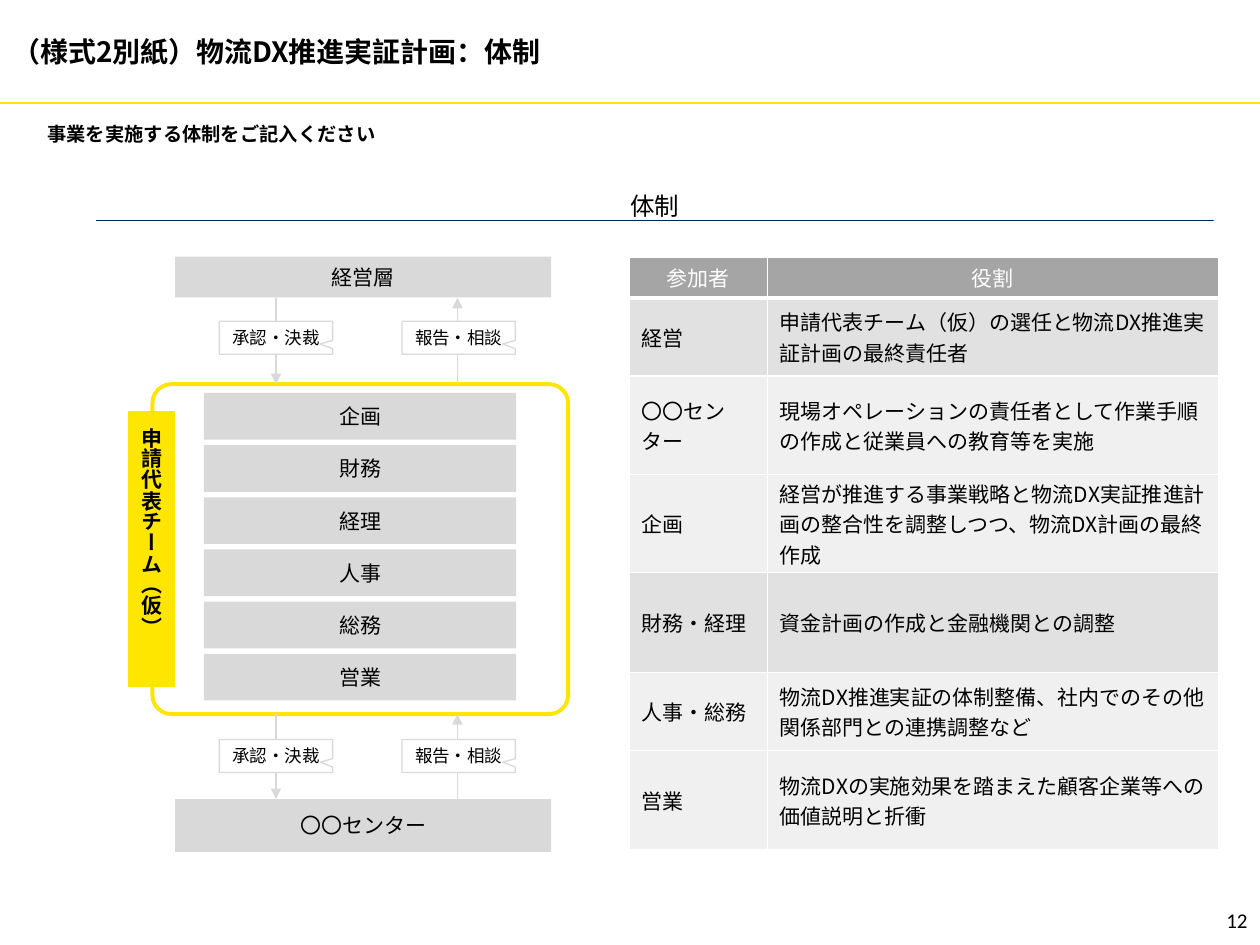
from dataclasses import dataclass

from lxml import etree
from pptx import Presentation
from pptx.dml.color import RGBColor
from pptx.enum.shapes import MSO_CONNECTOR, MSO_SHAPE
from pptx.enum.text import MSO_ANCHOR, PP_ALIGN
from pptx.oxml.ns import qn
from pptx.util import Pt

LEFT, CENTER, RIGHT = PP_ALIGN.LEFT, PP_ALIGN.CENTER, PP_ALIGN.RIGHT
TOP, MIDDLE, BOTTOM = MSO_ANCHOR.TOP, MSO_ANCHOR.MIDDLE, MSO_ANCHOR.BOTTOM
RECT, ROUND = MSO_SHAPE.RECTANGLE, MSO_SHAPE.ROUNDED_RECTANGLE
CALLOUT = MSO_SHAPE.RECTANGULAR_CALLOUT
STRAIGHT = MSO_CONNECTOR.STRAIGHT


@dataclass(frozen=True)
class Theme:
    """Hold the colours, fonts and type sizes."""
    face: str = "Noto Sans CJK JP"
    digit: str = "Calibri"
    ink: str = "000000"
    white: str = "FFFFFF"
    gold: str = "FFE600"
    navy: str = "002060"
    pale: str = "D6D6E8"
    gray: str = "D9D9D9"
    head: str = "A5A5A5"
    dark: str = "E1E1E1"
    light: str = "F0F0F0"
    title: int = 16
    topic: int = 14
    body: int = 12
    lead: int = 11
    note: int = 10


THEME = Theme()
TEAM = ["企画", "財務", "経理", "人事", "総務", "営業"]
ROLES = [
    ("参加者", "役割", 23.4, THEME.head),
    ("経営", "申請代表チーム（仮）の選任と物流DX推進実証計画の最終責任者", 44.6, THEME.dark),
    ("〇〇センター", "現場オペレーションの責任者として作業手順の作成と従業員への教育等を実施", 56.2, THEME.light),
    ("企画", "経営が推進する事業戦略と物流DX実証推進計画の整合性を調整しつつ、物流DX計画の最終作成",
     56.2, THEME.light),
    ("財務・経理", "資金計画の作成と金融機関との調整", 57, THEME.dark),
    ("人事・総務", "物流DX推進実証の体制整備、社内でのその他関係部門との連携調整など", 44.6, THEME.light),
    ("営業", "物流DXの実施効果を踏まえた顧客企業等への価値説明と折衝", 57, THEME.light),
]


def apply(item, values):
    """Set each named value on the item."""
    for name, value in values.items():
        setattr(item, name, value)


def paint(fill, color):
    """Fill with a colour, or clear the fill if there is none."""
    if color:
        fill.solid()
        fill.fore_color.rgb = RGBColor.from_string(color)
    else:
        fill.background()


def stroke(line, color, width=0.75):
    """Draw a line format in a colour and width."""
    paint(line.fill, color)
    if color:
        line.width = Pt(width)


def write(frame, text, size=THEME.body, align=CENTER, bold=False,
          color=THEME.ink, face=THEME.face):
    """Write one styled paragraph and return it."""
    para = frame.paragraphs[0]
    para.alignment = align
    run = para.add_run()
    run.text = text
    apply(run.font, {"size": Pt(size), "bold": bold, "name": face})
    run.font.color.rgb = RGBColor.from_string(color)
    etree.SubElement(run.font._element, qn("a:ea"), typeface=face)
    return para


def place(frame, anchor, side, edge):
    """Wrap the text and set its anchor and margins."""
    apply(frame, {
        "word_wrap": True, "vertical_anchor": anchor,
        "margin_left": Pt(side), "margin_right": Pt(side),
        "margin_top": Pt(edge), "margin_bottom": Pt(edge),
    })


def label(slide, area, text, anchor=MIDDLE, **style):
    """Add a plain text box."""
    frame = slide.shapes.add_textbox(*map(Pt, area)).text_frame
    place(frame, anchor, 7.2, 3.6)
    write(frame, text, **style)


def block(slide, area, kind=RECT, fill=THEME.gray, line=None, width=0.75):
    """Add a flat shape with a ready text frame."""
    shape = slide.shapes.add_shape(kind, *map(Pt, area))
    shape.shadow.inherit = False
    paint(shape.fill, fill)
    stroke(shape.line, line, width)
    place(shape.text_frame, MIDDLE, 2.9, 2.9)
    return shape


def rule(slide, start, end, color=THEME.gray, width=0.75, arrow=False):
    """Add a straight line, with an arrowhead if asked."""
    line = slide.shapes.add_connector(STRAIGHT, *map(Pt, start + end))
    stroke(line.line, color, width)
    etree.SubElement(line._element.spPr, qn("a:effectLst"))
    if arrow:
        etree.SubElement(line.line._get_or_add_ln(), qn("a:tailEnd"), type="triangle")


def border(cell, row):
    """Give a cell white edges, thick below the header."""
    props = cell._tc.get_or_add_tcPr()
    widths = {"lnL": 1, "lnR": 1, "lnT": 3 if row == 1 else 1, "lnB": 3 if row == 0 else 1}
    for tag, width in widths.items():
        edge = etree.SubElement(props, qn("a:" + tag), w=str(Pt(width)))
        fill = etree.SubElement(edge, qn("a:solidFill"))
        etree.SubElement(fill, qn("a:srgbClr"), val=THEME.white)


def grid(slide):
    """Add the table of members and roles."""
    table = slide.shapes.add_table(len(ROLES), 2, *map(Pt, (359.3, 146.9, 337, 339))).table
    apply(table, {"first_row": False, "horz_banding": False})
    for column, width in zip(table.columns, (79.2, 257.8)):
        column.width = Pt(width)
    for row, (name, role, height, fill) in enumerate(ROLES):
        table.rows[row].height = Pt(height)
        for col, text in enumerate((name, role)):
            cell = table.cell(row, col)
            border(cell, row)
            paint(cell.fill, fill)
            apply(cell, {
                "vertical_anchor": MIDDLE, "margin_left": Pt(7.2), "margin_right": Pt(7.2),
                "margin_top": Pt(1.8), "margin_bottom": Pt(1.8),
            })
            write(cell.text_frame, text, align=LEFT if row else CENTER,
                  color=THEME.ink if row else THEME.white)


def flow(slide, top, end, note):
    """Add the two opposed arrows and their callouts."""
    rule(slide, (157.7, top), (157.7, end), arrow=True)
    rule(slide, (261.4, end), (261.4, top), arrow=True)
    for left, text in ((125.3, "承認・決裁"), (229.7, "報告・相談")):
        shape = block(slide, (left, note, 64.8, 18.8), CALLOUT, THEME.white, THEME.gray)
        shape.adjustments[0], shape.adjustments[1] = 0.388, 0.188
        place(shape.text_frame, MIDDLE, 0, 0)
        write(shape.text_frame, text, THEME.note)


def team(slide):
    """Add the framed team with its upright name."""
    frame = block(slide, (87.1, 219.5, 237.6, 188.6), ROUND, None, THEME.gold, 2.25)
    frame.adjustments[0] = 0.058
    name = block(slide, (73.4, 235.4, 26.3, 157), fill=THEME.gold, line=THEME.gold)
    name.text_frame._txBody.bodyPr.set("vert", "eaVert")
    para = write(name.text_frame, "申請代表チーム（仮）", align=LEFT, bold=True)
    para._p.get_or_add_pPr().set("marL", str(Pt(6)))
    for step, text in enumerate(TEAM):
        part = block(slide, (116.6, 224.6 + 29.8 * step, 178.4, 26.7))
        write(part.text_frame, text)


def main():
    """Build and save the slide."""
    deck = Presentation()
    apply(deck, {"slide_width": Pt(720), "slide_height": Pt(540)})
    slide = deck.slides.add_slide(deck.slide_layouts[6])
    rule(slide, (0, 58.8), (720, 58.8), THEME.gold, 1.5)
    label(slide, (0, 0, 720, 58.8), "（様式2別紙）物流DX推進実証計画：体制",
          size=THEME.title, align=LEFT, bold=True)
    label(slide, (20, 66.2, 681, 21), "事業を実施する体制をご記入ください", TOP,
          size=THEME.lead, align=LEFT, bold=True)
    label(slide, (558, 511.2, 162, 28.8), "12", align=RIGHT, face=THEME.digit)
    topic = block(slide, (55.2, 126, 638, 0), fill=THEME.pale, line=THEME.navy)
    place(topic.text_frame, BOTTOM, 7.2, 2.9)
    write(topic.text_frame, "体制", THEME.topic).line_spacing = 1.3
    for top, height, text in ((146.6, 23.4, "経営層"), (456.6, 30.2, "〇〇センター")):
        write(block(slide, (100, top, 215, height)).text_frame, text)
    team(slide)
    grid(slide)
    flow(slide, 170.2, 219.5, 183.6)
    flow(slide, 408.1, 456.6, 422.6)
    deck.save("out.pptx")


if __name__ == "__main__":
    main()
